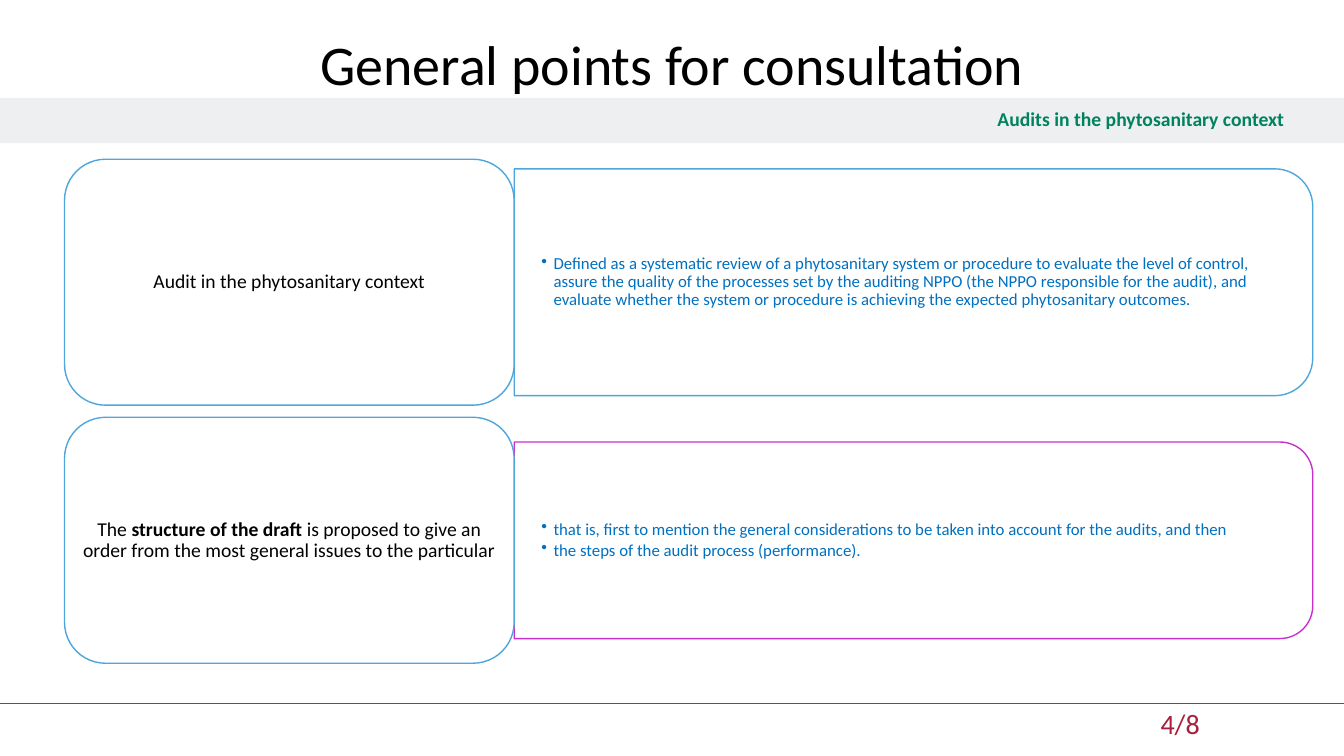
"""Build the slide on general points for consultation about audits."""
from lxml import etree
from pptx import Presentation
from pptx.dml.color import RGBColor
from pptx.enum.shapes import MSO_CONNECTOR, MSO_SHAPE
from pptx.enum.text import MSO_ANCHOR, MSO_AUTO_SIZE, PP_ALIGN
from pptx.oxml.ns import qn
from pptx.util import Inches, Pt

COLORS = {
    "white": "FFFFFF", "black": "000000", "green": "00825F", "band": "D8D9DC",
    "crimson": "A81E3B", "sky": "4EA6DC", "magenta": "C830CC", "blue": "0070C0",
}
ROWS = [
    {
        "middle": 2.8, "height": 2.25, "outline": "sky",
        "topic": [("Audit in the phytosanitary context", False)],
        "points": [
            "Defined as a systematic review of a phytosanitary system or procedure to "
            "evaluate the level of control, assure the quality of the processes set by "
            "the auditing NPPO (the NPPO responsible for the audit), and evaluate whether "
            "the system or procedure is achieving the expected phytosanitary outcomes.",
        ],
    },
    {
        "middle": 5.36, "height": 1.95, "outline": "magenta",
        "topic": [
            ("The ", False),
            ("structure of the draft ", True),
            ("is proposed to give an order from the most general issues to the particular", False),
        ],
        "points": [
            "that is, first to mention the general considerations to be taken into account "
            "for the audits, and then",
            "the steps of the audit process (performance).",
        ],
    },
]
TOPIC_LEFT, TOPIC_WIDTH, TOPIC_HEIGHT = 0.64, 4.46, 2.44
POINTS_LEFT, POINTS_WIDTH = 5.1, 7.92


def write(shape, paragraphs, size, color, align=PP_ALIGN.LEFT, spacing=0.9,
          insets=(0.1, 0.05, 0.1, 0.05), anchor=MSO_ANCHOR.MIDDLE, bullet=False):
    frame = shape.text_frame
    frame.word_wrap = True
    frame.auto_size = MSO_AUTO_SIZE.NONE
    frame.vertical_anchor = anchor
    frame.margin_left, frame.margin_top, frame.margin_right, frame.margin_bottom = map(Inches, insets)
    for index, spans in enumerate(paragraphs):
        para = frame.add_paragraph() if index else frame.paragraphs[0]
        para.alignment = align
        para.line_spacing = spacing
        para.space_before = Pt(0)
        if bullet:
            para.level = 1
            para.space_after = Pt(1.8)
            properties = para._p.get_or_add_pPr()
            properties.set("marL", str(Inches(0.12)))
            properties.set("indent", str(Inches(-0.12)))
            etree.SubElement(properties, qn("a:buChar")).set("char", "•")
        for text, bold in spans:
            span = para.add_run()
            span.text = text
            span.font.name = "Calibri"
            span.font.size = Pt(size)
            span.font.bold = bold
            span.font.color.rgb = RGBColor.from_string(COLORS[color])


def add_panel(kind, left, top, width, height, fill, outline=None):
    panel = slide.shapes.add_shape(kind, Inches(left), Inches(top), Inches(width), Inches(height))
    panel.shadow.inherit = False
    panel.fill.solid()
    panel.fill.fore_color.rgb = RGBColor.from_string(COLORS[fill])
    if outline:
        panel.line.color.rgb = RGBColor.from_string(COLORS[outline])
        panel.line.width = Pt(1)
    else:
        panel.line.fill.background()
    return panel


deck = Presentation()
deck.slide_width, deck.slide_height = Inches(13.33), Inches(7.5)
slide = deck.slides.add_slide(deck.slide_layouts[5])

rule = slide.shapes.add_connector(
    MSO_CONNECTOR.STRAIGHT, Inches(0), Inches(6.98), Inches(13.33), Inches(6.98))
rule.line.color.rgb = RGBColor.from_string(COLORS["green"])
rule.line.width = Pt(1)
etree.SubElement(rule.element.spPr, qn("a:effectLst"))

band = add_panel(MSO_SHAPE.RECTANGLE, 0, 0.97, 13.33, 0.45, "band")
band_color = band.element.spPr.find(qn("a:solidFill"))[0]
etree.SubElement(band_color, qn("a:alpha")).set("val", "42000")
write(band, [[("Audits in the phytosanitary context", True)]], 14, "green",
      align=PP_ALIGN.RIGHT, insets=(0.59, 0.05, 0.59, 0.05))

page_number = slide.shapes.add_textbox(Inches(10.92), Inches(7.01), Inches(2.42), Inches(0.39))
write(page_number, [[("4/8", False)]], 20, "crimson", spacing=1.0,
      insets=(0.59, 0, 0.39, 0.05), anchor=MSO_ANCHOR.TOP)

for row in ROWS:
    middle, height = row["middle"], row["height"]
    points_center = POINTS_LEFT + POINTS_WIDTH / 2
    points_panel = add_panel(
        MSO_SHAPE.ROUND_2_SAME_RECTANGLE, points_center - height / 2,
        middle - POINTS_WIDTH / 2, height, POINTS_WIDTH, "white", row["outline"])
    points_panel.rotation = 90

    text_height = height * 0.9
    points_box = slide.shapes.add_textbox(
        Inches(POINTS_LEFT), Inches(middle - text_height / 2), Inches(7.82), Inches(text_height))
    write(points_box, [[(point, False)] for point in row["points"]], 12, "blue",
          insets=(0.27, 0.14, 0.27, 0.14), bullet=True)

    topic_panel = add_panel(
        MSO_SHAPE.ROUNDED_RECTANGLE, TOPIC_LEFT, middle - TOPIC_HEIGHT / 2,
        TOPIC_WIDTH, TOPIC_HEIGHT, "white", "sky")
    write(topic_panel, [row["topic"]], 14, "black", align=PP_ALIGN.CENTER,
          insets=(0.06, 0.03, 0.06, 0.03))

title = slide.shapes.title
title.left, title.top, title.width, title.height = map(Inches, (0, 0, 13.33, 1.25))
write(title, [[("General points for consultation", False)]], 40, "black",
      align=PP_ALIGN.CENTER, spacing=1.0)
slide.shapes.element.append(title.element)

deck.save("out.pptx")
